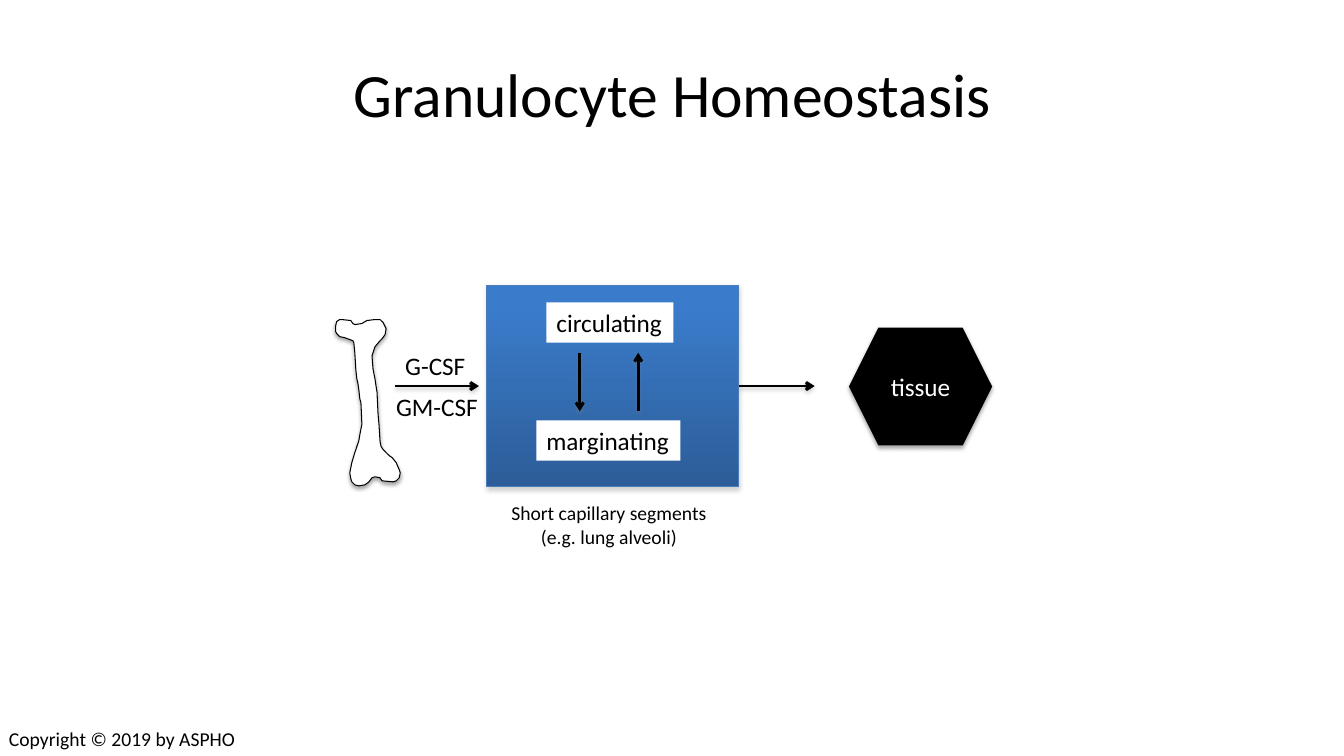
from lxml import etree
from pptx import Presentation
from pptx.dml.color import RGBColor
from pptx.enum import shapes, text
from pptx.oxml import ns
from pptx.util import Inches, Pt

BLACK = RGBColor(0x00, 0x00, 0x00)
WHITE = RGBColor(0xFF, 0xFF, 0xFF)
GRAY = RGBColor(0x80, 0x80, 0x80)
BLUE_TOP = RGBColor(0x3A, 0x7C, 0xCB)
BLUE_BOTTOM = RGBColor(0x2C, 0x5D, 0x98)
BLUE_EDGE = RGBColor(0x4A, 0x7E, 0xBB)

BONE_OUTLINE = [
    (3.5, 3.38), (3.42, 3.35), (3.37, 3.34), (3.34, 3.31), (3.33, 3.29),
    (3.33, 3.23), (3.34, 3.19), (3.37, 3.17), (3.39, 3.17), (3.48, 3.18),
    (3.5, 3.21), (3.52, 3.22), (3.59, 3.21), (3.64, 3.18), (3.72, 3.17),
    (3.77, 3.17), (3.8, 3.2), (3.83, 3.26), (3.82, 3.32), (3.79, 3.36),
    (3.77, 3.38), (3.72, 3.44), (3.69, 3.53), (3.7, 3.66), (3.72, 3.76),
    (3.73, 3.83), (3.74, 3.89), (3.75, 4.11), (3.76, 4.22), (3.77, 4.38),
    (3.78, 4.43), (3.8, 4.46), (3.84, 4.5), (3.86, 4.52), (3.89, 4.54),
    (3.93, 4.59), (3.96, 4.66), (3.97, 4.69), (3.96, 4.74), (3.93, 4.77),
    (3.9, 4.78), (3.79, 4.77), (3.77, 4.74), (3.72, 4.73), (3.69, 4.74),
    (3.66, 4.78), (3.62, 4.81), (3.56, 4.82), (3.52, 4.81), (3.49, 4.78),
    (3.48, 4.75), (3.47, 4.69), (3.49, 4.59), (3.52, 4.49), (3.53, 4.46),
    (3.54, 4.43), (3.56, 4.37), (3.57, 4.31), (3.59, 4.21), (3.58, 3.99),
    (3.57, 3.96), (3.56, 3.87), (3.55, 3.8), (3.54, 3.76), (3.53, 3.67),
    (3.52, 3.5), (3.51, 3.4),
]


def add_shadow(shape, color, opacity=35):
    properties = shape._element.spPr
    for effects in properties.findall(ns.qn("a:effectLst")):
        properties.remove(effects)
    effects = etree.SubElement(properties, ns.qn("a:effectLst"))
    outer = etree.SubElement(effects, ns.qn("a:outerShdw"), blurRad=str(Pt(3.1)),
                             dist=str(Pt(1.8)), dir="5400000", rotWithShape="0")
    tone = etree.SubElement(outer, ns.qn("a:srgbClr"), val=str(color))
    etree.SubElement(tone, ns.qn("a:alpha"), val=str(opacity * 1000))


def write(shape, words, size, color=BLACK, align=text.PP_ALIGN.LEFT):
    shape.text_frame.text = words
    for paragraph in shape.text_frame.paragraphs:
        paragraph.alignment = align
        for run in paragraph.runs:
            run.font.name = "Calibri"
            run.font.size = Pt(size)
            run.font.color.rgb = color


def add_label(slide, box, words, size=18, fill=None, wrap=False,
              align=text.PP_ALIGN.LEFT, anchor=text.MSO_ANCHOR.TOP):
    label = slide.shapes.add_textbox(*map(Inches, box))
    write(label, words, size, align=align)
    frame = label.text_frame
    frame.word_wrap = wrap
    frame.vertical_anchor = anchor
    if not wrap:
        frame.auto_size = text.MSO_AUTO_SIZE.SHAPE_TO_FIT_TEXT
    if fill is not None:
        label.fill.solid()
        label.fill.fore_color.rgb = fill


def add_arrow(slide, start, end):
    arrow = slide.shapes.add_connector(shapes.MSO_CONNECTOR.STRAIGHT,
                                       *map(Inches, start + end))
    arrow.line.color.rgb = BLACK
    arrow.line.width = Pt(2)
    etree.SubElement(arrow.line._get_or_add_ln(), ns.qn("a:tailEnd"), type="arrow")
    add_shadow(arrow, GRAY, 38)


def add_bone(slide):
    points = [(Inches(x), Inches(y)) for x, y in BONE_OUTLINE]
    builder = slide.shapes.build_freeform(*points[0])
    builder.add_line_segments(points[1:], close=True)
    bone = builder.convert_to_shape()
    bone.fill.solid()
    bone.fill.fore_color.rgb = WHITE
    bone.line.color.rgb = BLACK
    bone.line.width = Pt(0.75)
    add_shadow(bone, BLACK)


def add_capillary(slide):
    capillary = slide.shapes.add_shape(shapes.MSO_SHAPE.RECTANGLE,
                                       *map(Inches, (4.83, 2.83, 2.5, 2)))
    capillary.fill.gradient()
    capillary.fill.gradient_angle = 270
    top, bottom = capillary.fill.gradient_stops
    top.color.rgb, top.position = BLUE_TOP, 0.1
    bottom.color.rgb, bottom.position = BLUE_BOTTOM, 1
    capillary.line.color.rgb = BLUE_EDGE
    capillary.line.width = Pt(0.75)
    add_shadow(capillary, GRAY)


def add_tissue(slide):
    tissue = slide.shapes.add_shape(shapes.MSO_SHAPE.HEXAGON,
                                    *map(Inches, (8.42, 3.25, 1.42, 1.17)))
    tissue.fill.solid()
    tissue.fill.fore_color.rgb = BLACK
    tissue.line.fill.background()
    add_shadow(tissue, BLACK)
    write(tissue, "tissue", 18, WHITE, text.PP_ALIGN.CENTER)
    tissue.text_frame.vertical_anchor = text.MSO_ANCHOR.MIDDLE


def main():
    deck = Presentation()
    deck.slide_width, deck.slide_height = Inches(13.33), Inches(7.5)
    slide = deck.slides.add_slide(deck.slide_layouts[6])
    center = text.PP_ALIGN.CENTER

    add_label(slide, (0.67, 0.3, 12, 1.25), "Granulocyte Homeostasis", 44,
              wrap=True, align=center, anchor=text.MSO_ANCHOR.MIDDLE)
    add_bone(slide)
    add_capillary(slide)
    add_label(slide, (5.42, 3, 1.26, 0.4), "circulating", fill=WHITE)
    add_label(slide, (5.32, 4.17, 1.43, 0.4), "marginating", fill=WHITE)
    for start, end in [
        ((5.75, 3.5), (5.75, 4.08)),
        ((6.33, 4.08), (6.33, 3.5)),
        ((7.33, 3.83), (8.08, 3.83)),
        ((3.92, 3.83), (4.75, 3.83)),
    ]:
        add_arrow(slide, start, end)
    add_tissue(slide)
    add_label(slide, (3.92, 3.43, 0.81, 0.4), "G-CSF")
    add_label(slide, (3.83, 3.83, 1.02, 0.4), "GM-CSF")
    add_label(slide, (4.94, 4.92, 2.2, 0.57),
              "Short capillary segments\n(e.g. lung alveoli)", 14, align=center)
    add_label(slide, (-0.01, 7.16, 2.48, 0.34), "Copyright © 2019 by ASPHO", 14, wrap=True)
    deck.save("out.pptx")


if __name__ == "__main__":
    main()
